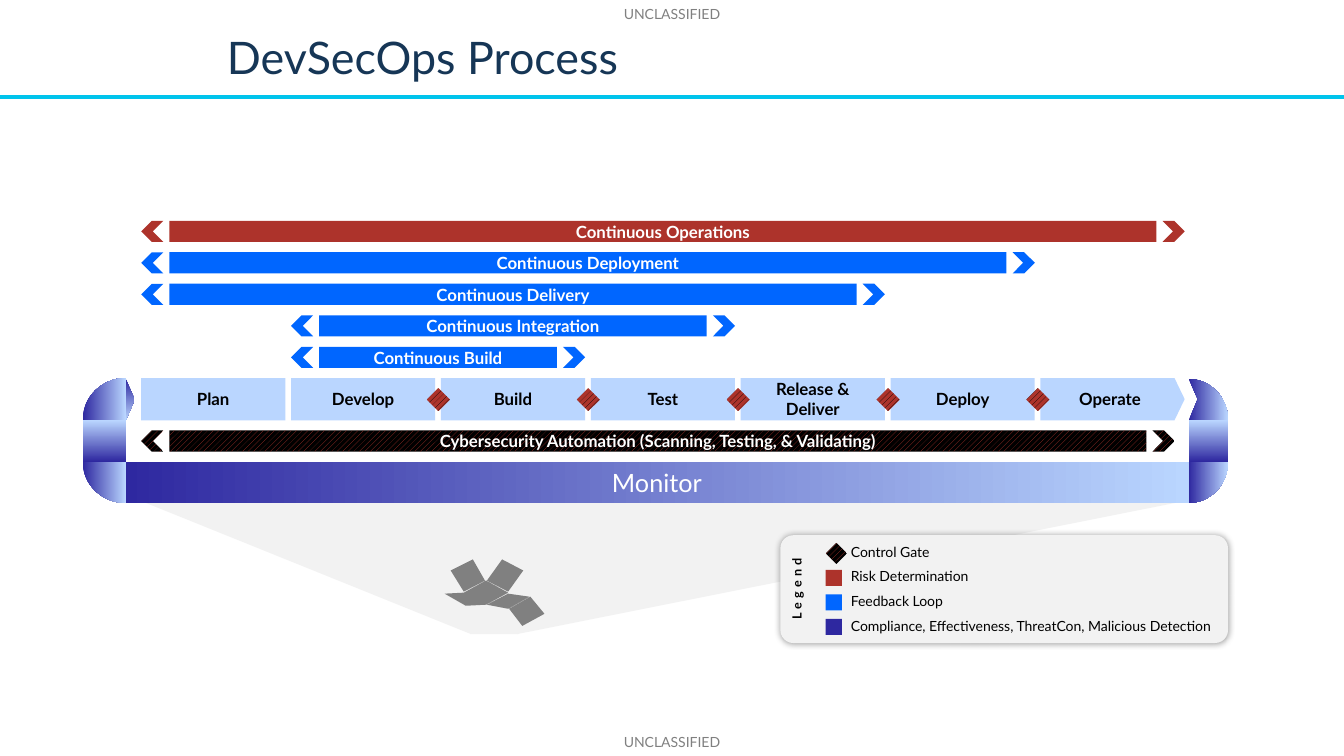
from dataclasses import dataclass
from math import cos, pi, sin

from lxml.etree import SubElement
from pptx import Presentation
from pptx.dml.color import RGBColor
from pptx.enum.dml import MSO_PATTERN
from pptx.enum.shapes import MSO_CONNECTOR, MSO_SHAPE as Form
from pptx.enum.text import MSO_ANCHOR as Anchor, MSO_AUTO_SIZE as AutoSize, PP_ALIGN as Align
from pptx.oxml.ns import qn
from pptx.util import Inches, Pt


@dataclass(frozen=True)
class Theme:
    font: str = "Lato"
    title_size: int = 32
    monitor_size: int = 18
    label_size: int = 12
    small_size: int = 10
    legend_size: int = 9
    navy: str = "163656"
    cyan: str = "00C4EC"
    gray: str = "808080"
    pale: str = "F2F2F2"
    sky: str = "BAD6FF"
    blue: str = "0066FF"
    red: str = "AD332B"
    violet: str = "2E28A0"
    black: str = "000000"
    white: str = "FFFFFF"


theme = Theme()
RAMP = ("ramp", theme.violet, theme.sky)
SCAN = ("stripes", theme.red, theme.black)
GATE = ("stripes", theme.black, theme.red)


class Page:
    def __init__(self, deck, style):
        self.style = style
        self.slide = deck.slides.add_slide(deck.slide_layouts[5])
        self.shapes = self.slide.shapes

    def paint(self, shape, paint):
        """Fill with one colour, or with a (kind, first, second) pair of colours."""
        shape.shadow.inherit = False
        shape.line.fill.background()
        fill = shape.fill
        if isinstance(paint, str):
            fill.solid()
            fill.fore_color.rgb = RGBColor.from_string(paint)
            return
        kind, first, second = paint
        if kind == "ramp":
            fill.gradient()
            fill.gradient_angle = 0
            for stop, color in zip(fill.gradient_stops, (first, second)):
                stop.color.rgb = RGBColor.from_string(color)
        else:
            fill.patterned()
            fill.pattern = MSO_PATTERN.WIDE_UPWARD_DIAGONAL
            fill.fore_color.rgb = RGBColor.from_string(first)
            fill.back_color.rgb = RGBColor.from_string(second)

    def add_span(self, frame, text, size, color, bold=False, align=Align.CENTER, spacing=None):
        para = frame.paragraphs[0]
        para.alignment = align
        if spacing:
            para.line_spacing = spacing
        span = para.add_run()
        span.text = text
        font = span.font
        font.name, font.size, font.bold = self.style.font, Pt(size), bold
        font.color.rgb = RGBColor.from_string(color)
        return span

    def shape(self, form, left, top, width, height, paint, turn=0, adjust=None):
        shape = self.shapes.add_shape(form, Inches(left), Inches(top), Inches(width), Inches(height))
        shape.rotation = turn
        if adjust is not None:
            shape.adjustments[0] = adjust
        self.paint(shape, paint)
        return shape

    def label(self, shape, text, color, size=theme.label_size, bold=True):
        shape.text_frame.vertical_anchor = Anchor.MIDDLE
        self.add_span(shape.text_frame, text, size, color, bold)

    def text(self, left, top, width, height, text, color, align=Align.LEFT, inset=None, spacing=None):
        box = self.shapes.add_textbox(Inches(left), Inches(top), Inches(width), Inches(height))
        frame = box.text_frame
        frame.auto_size = AutoSize.SHAPE_TO_FIT_TEXT
        frame.word_wrap = inset is not None
        if inset is not None:
            frame.margin_left = frame.margin_right = Inches(inset)
            frame.margin_top = frame.margin_bottom = Inches(inset)
        else:
            frame.vertical_anchor = Anchor.MIDDLE
        self.add_span(frame, text, self.style.small_size, color, align=align, spacing=spacing)

    def outline(self, contours, paint):
        contours = [[(Inches(x), Inches(y)) for x, y in points] for points in contours]
        builder = self.shapes.build_freeform(*contours[0][0])
        for number, points in enumerate(contours):
            if number:
                builder.move_to(*points[0])
            builder.add_line_segments(points[1:], close=True)
        self.paint(builder.convert_to_shape(), paint)

    def rule(self, y, width, color, weight):
        line = self.shapes.add_connector(MSO_CONNECTOR.STRAIGHT, 0, Inches(y), Inches(width), Inches(y))
        line.line.color.rgb = RGBColor.from_string(color)
        line.line.width = Pt(weight)
        SubElement(line._element.spPr, qn("a:effectLst"))

    def title(self, text, left, top, width, height):
        box = self.shapes.title
        box.left, box.top, box.width, box.height = map(Inches, (left, top, width, height))
        frame = box.text_frame
        frame.auto_size, frame.vertical_anchor = AutoSize.NONE, Anchor.MIDDLE
        self.add_span(frame, text, self.style.title_size, self.style.navy, align=Align.LEFT, spacing=0.9)

    def band(self, text, start, end, top, paint):
        """A labelled bar between two outward chevrons."""
        size, inset = 0.22, 0.28
        self.shape(Form.CHEVRON, end - size, top, size, 0.21, paint)
        self.shape(Form.CHEVRON, start, top, size, 0.21, paint, turn=180)
        bar = self.shape(Form.RECTANGLE, start + inset, top, end - start - 2 * inset, 0.21, paint)
        self.label(bar, text, self.style.white)

    def corner(self, x, y, reach, rise, notch=()):
        """A quarter ellipse around (x, y); the signs of reach and rise pick the quarter."""
        steps = 16
        arc = [(x + reach * sin(pi / 2 * i / steps), y + rise * cos(pi / 2 * i / steps))
               for i in range(steps + 1)]
        self.outline([arc + [(x, y), *notch]], RAMP)


def build(deck):
    page = Page(deck, theme)

    # Title, rule and markings
    page.title("DevSecOps Process", 2.15, 0.22, 11.09, 0.74)
    page.rule(0.96, 13.33, theme.cyan, 3)
    for top in (0.07, 7.29):
        page.text(0, top, 13.33, 0.16, "UNCLASSIFIED", theme.gray, Align.CENTER, inset=0, spacing=0.93)

    # Funnel below the monitor bar
    for form, left, width, adjust in ((Form.TRAPEZOID, 4.01, 1.79, 0.5),
                                      (Form.ISOSCELES_TRIANGLE, 5.13, 6.62, 1),
                                      (Form.ISOSCELES_TRIANGLE, 1.4, 3.27, 0)):
        page.shape(form, left, 4.97, width, 1.32, theme.pale, turn=180, adjust=adjust)

    # Stages
    stages = ("Plan", "Develop", "Build", "Test", "Release & Deliver", "Deploy", "Operate")
    stage_width = 1.43
    pitch = (10.32 - 1.4) / 6
    lefts = [1.4 + pitch * i for i in range(len(stages))]
    for name, left in zip(stages, lefts):
        last = name == stages[-1]
        form, adjust = (Form.PENTAGON, 0.24) if last else (Form.RECTANGLE, None)
        box = page.shape(form, left, 3.75, stage_width, 0.42, theme.sky, adjust=adjust)
        page.label(box, name, theme.black)

    # Monitor loop around the stages
    page.corner(11.79, 4.17, 0.39, -0.41, notch=[(11.88, 3.96)])
    page.corner(11.79, 4.58, 0.39, 0.41)
    page.shape(Form.RECTANGLE, 11.78, 4.18, 0.41, 0.39, RAMP, turn=270)
    monitor = page.shape(Form.RECTANGLE, 1.24, 4.58, 10.55, 0.41, RAMP)
    page.label(monitor, "Monitor", theme.white, theme.monitor_size, bold=False)
    page.corner(1.25, 4.17, -0.43, -0.42)
    page.corner(1.25, 4.58, -0.43, 0.41)
    page.shape(Form.RECTANGLE, 0.83, 4.16, 0.41, 0.43, RAMP, turn=270)
    page.shape(Form.ISOSCELES_TRIANGLE, 1.08, 3.92, 0.42, 0.09, RAMP, turn=90)

    # Continuous bands: name, first stage, last stage, colour
    bands = (("Continuous Operations", 0, 6, theme.red),
             ("Continuous Deployment", 0, 5, theme.blue),
             ("Continuous Delivery", 0, 4, theme.blue),
             ("Continuous Integration", 1, 3, theme.blue),
             ("Continuous Build", 1, 2, theme.blue))
    for row, (name, first, last, color) in enumerate(bands):
        page.band(name, lefts[first], lefts[last] + stage_width, 2.19 + 1.25 / 4 * row, color)
    page.band("Cybersecurity Automation (Scanning, Testing, & Validating)", 1.4, 11.65, 4.27, SCAN)

    # Control gates between stages
    for left in lefts[2:]:
        page.shape(Form.DIAMOND, left - 0.14, 3.85, 0.23, 0.23, GATE)

    # Legend
    panel = page.shape(Form.ROUNDED_RECTANGLE, 7.74, 5.31, 4.44, 1.07, theme.pale, adjust=0.12)
    effects = panel._element.spPr.find(qn("a:effectLst"))
    glow = SubElement(effects, qn("a:outerShdw"), blurRad=str(Pt(5)), dist="0", dir="0",
                      algn="ctr", rotWithShape="0")
    SubElement(SubElement(glow, qn("a:srgbClr"), val=theme.black), qn("a:alpha"), val="40000")
    panel.text_frame.vertical_anchor = Anchor.TOP
    panel.text_frame._txBody.bodyPr.set("vert", "vert270")
    heading = page.add_span(panel.text_frame, "Legend", theme.legend_size, theme.black, bold=True)
    heading._r.get_or_add_rPr().set("spc", "300")
    entries = (("Control Gate", 0.98, Form.DIAMOND, 0.21, SCAN),
               ("Risk Determination", 1.37, Form.RECTANGLE, 0.16, theme.red),
               ("Feedback Loop", 1.13, Form.RECTANGLE, 0.16, theme.blue),
               ("Compliance, Effectiveness, ThreatCon, Malicious Detection", 3.81,
                Form.RECTANGLE, 0.16, theme.violet))
    for row, (name, width, form, size, paint) in enumerate(entries):
        top = 5.34 + 0.73 / 3 * row
        page.shape(form, 8.19, top + 0.15 - size / 2, size, size, paint)
        page.text(8.34, top, width, 0.27, name, theme.black)

    # Unfolded box symbol
    panels = [
        [(5.26, 5.92), (5.4, 6.09), (5.18, 6.21), (5.05, 6.04)],
        [(5.04, 5.89), (5.25, 5.92), (5.04, 6.04), (4.83, 6)],
        [(4.6, 5.88), (4.82, 6), (4.62, 6.01), (4.41, 5.89)],
        [(4.82, 5.76), (5.04, 5.88), (4.82, 6), (4.6, 5.88)],
        [(4.98, 5.55), (5.19, 5.66), (5.04, 5.87), (4.83, 5.76)],
        [(4.69, 5.55), (4.81, 5.76), (4.6, 5.87), (4.47, 5.66)],
    ]
    page.outline(panels, theme.gray)


if __name__ == "__main__":
    deck = Presentation()
    deck.slide_width, deck.slide_height = Inches(13.33), Inches(7.5)
    build(deck)
    deck.save("out.pptx")
